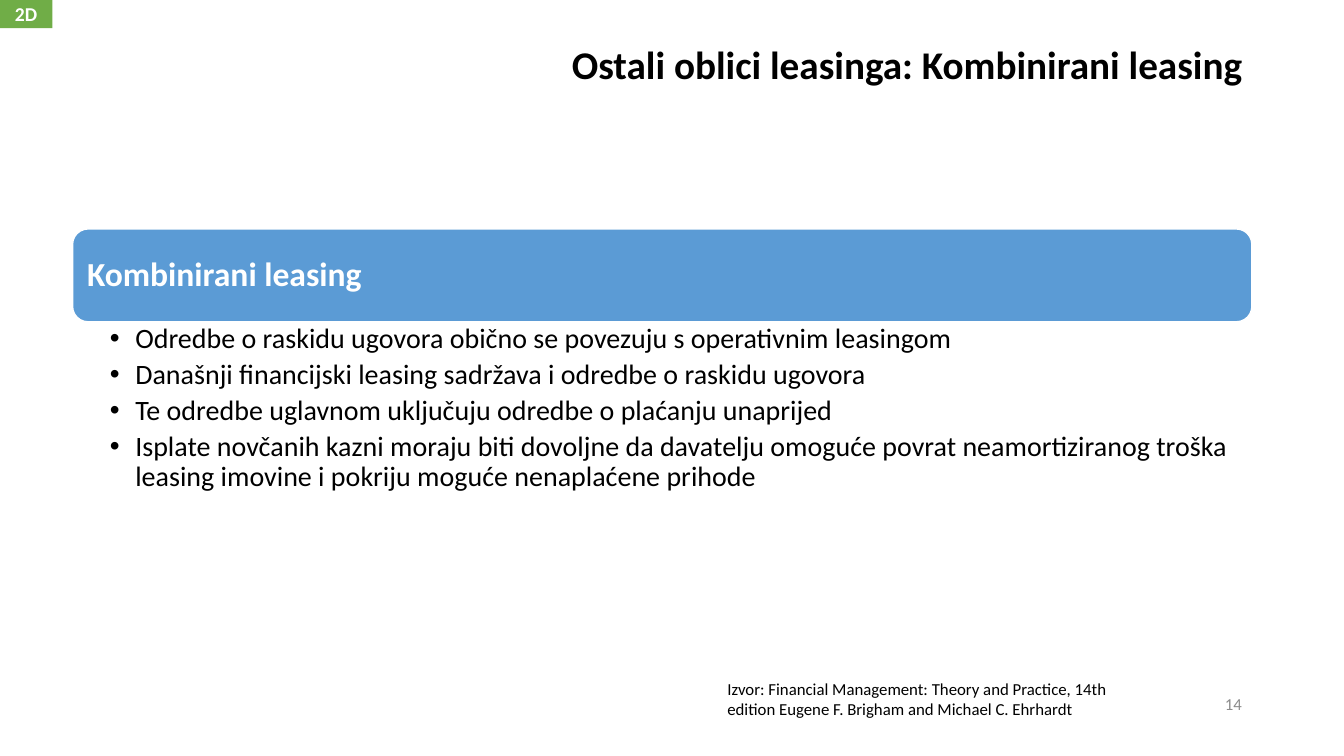
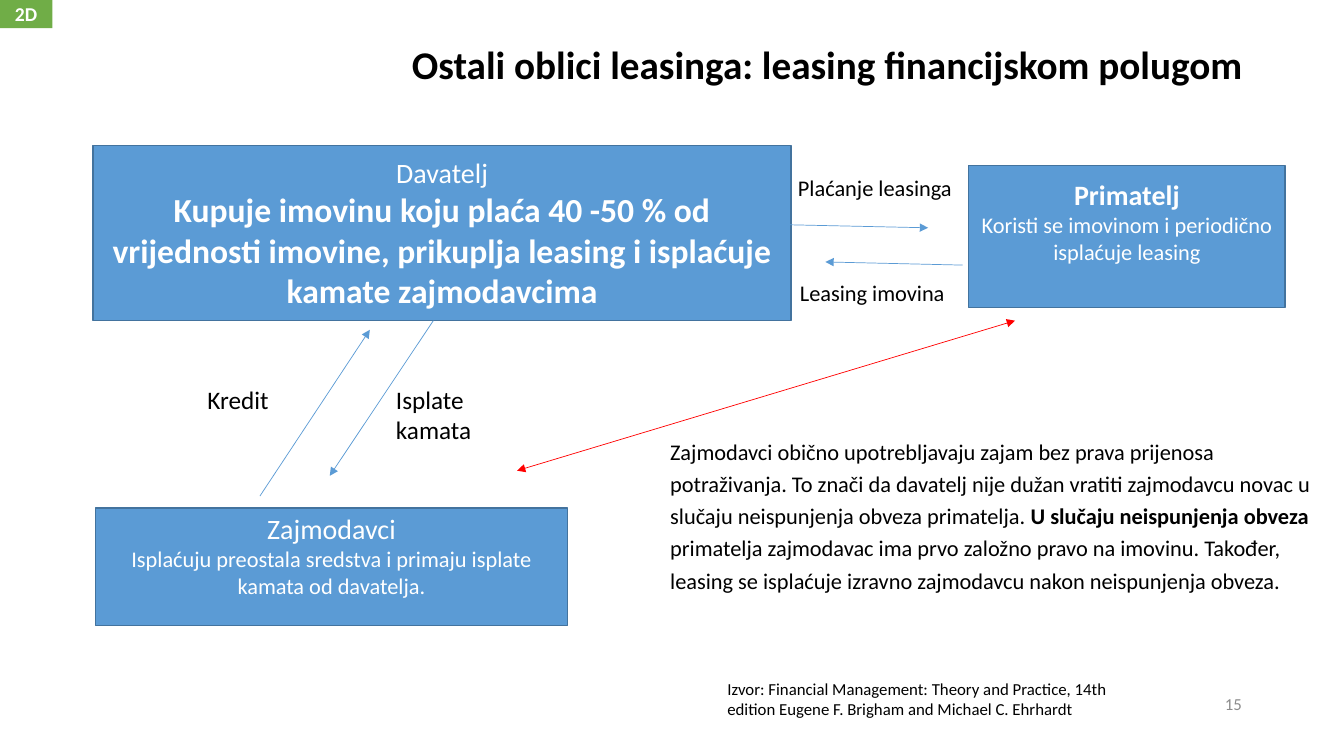
from dataclasses import dataclass
from typing import NamedTuple

from lxml.etree import SubElement
from pptx import Presentation
from pptx.dml.color import RGBColor
from pptx.enum.shapes import MSO_CONNECTOR, MSO_SHAPE
from pptx.enum.text import MSO_ANCHOR, PP_ALIGN
from pptx.oxml.ns import qn
from pptx.shapes.autoshape import Shape
from pptx.slide import Slide
from pptx.util import Cm, Pt


@dataclass(frozen=True)
class Theme:
    font: str = "Calibri"
    blue: str = "5B9BD5"
    edge: str = "43739E"
    green: str = "70AD47"
    red: str = "FF0000"
    white: str = "FFFFFF"
    black: str = "000000"
    gray: str = "8C8C8C"
    title: int = 28
    head: int = 24
    body: int = 20
    label: int = 18
    note: int = 16
    tag: int = 14
    small: int = 12


THEME = Theme()
SOURCE = ("Izvor: Financial Management: Theory and Practice, 14th edition "
          "Eugene F. Brigham and Michael C. Ehrhardt")


class Area(NamedTuple):
    """Left, top, width and height in centimetres."""
    x: float
    y: float
    w: float
    h: float


class Run(NamedTuple):
    text: str
    size: int
    bold: bool = False


class Panel(NamedTuple):
    area: Area
    lines: list[list[Run]]
    base: float = 0.13


class Label(NamedTuple):
    area: Area
    text: str
    size: int


class Arrow(NamedTuple):
    start: tuple[float, float]
    end: tuple[float, float]
    color: str = THEME.blue
    both: bool = False


PANELS = [
    Panel(Area(2.34, 3.66, 17.6, 4.42), [
        [Run("Davatelj", THEME.body)],
        [Run("Kupuje imovinu koju plaća 40 -50 % od vrijednosti imovine, "
             "prikuplja leasing i isplaćuje kamate zajmodavcima", THEME.head, True)]]),
    Panel(Area(24.41, 4.17, 7.98, 3.58), [
        [Run("Primatelj", THEME.body, True)],
        [Run("Koristi se imovinom i periodično isplaćuje leasing", THEME.note)]], 0.9),
    Panel(Area(2.41, 12.8, 11.89, 2.97), [
        [Run("Zajmodavci", THEME.body)],
        [Run("Isplaćuju preostala sredstva i primaju isplate kamata od davatelja.",
             THEME.note)]], 0.73),
]
LABELS = [
    Label(Area(19.86, 4.27, 5.72, 0.97), "Plaćanje leasinga", THEME.note),
    Label(Area(19.91, 6.91, 5.72, 0.97), "Leasing imovina", THEME.note),
    Label(Area(9.73, 9.55, 3.61, 2.44), "Isplate kamata", THEME.label),
    Label(Area(4.98, 9.55, 3.61, 1.7), "Kredit", THEME.label),
]
ARROWS = [
    Arrow((13.03, 11.86), (25.58, 8.08), THEME.red, True),
    Arrow((10.92, 8.08), (8.31, 11.99)),
    Arrow((6.55, 12.5), (9.32, 8.31)),
    Arrow((24.26, 6.68), (20.8, 6.6)),
    Arrow((19.69, 5.66), (23.39, 5.74)),
]
TERMS = [
    "Odredbe o raskidu ugovora obično se povezuju s operativnim leasingom",
    "Današnji financijski leasing sadržava i odredbe o raskidu ugovora",
    "Te odredbe uglavnom uključuju odredbe o plaćanju unaprijed",
    "Isplate novčanih kazni moraju biti dovoljne da davatelju omoguće povrat "
    "neamortiziranog troška leasing imovine i pokriju moguće nenaplaćene prihode",
]
NOTE = [
    Run("Zajmodavci obično upotrebljavaju zajam bez prava prijenosa potraživanja. "
        "To znači da davatelj nije dužan vratiti zajmodavcu novac u slučaju "
        "neispunjenja obveza primatelja. ", THEME.note),
    Run("U slučaju neispunjenja obveza ", THEME.note, True),
    Run("primatelja zajmodavac ima prvo založno pravo na imovinu. Također, leasing "
        "se isplaćuje izravno zajmodavcu nakon neispunjenja obveza.", THEME.note),
]


def write(shape: Shape, lines: list[list[Run]], *, color: str = THEME.black,
          align: PP_ALIGN = PP_ALIGN.LEFT, anchor: MSO_ANCHOR = MSO_ANCHOR.TOP,
          inset: tuple[float, float, float, float] = (0.25, 0.13, 0.25, 0.13),
          pitch: float = 1.0, after: float = 0, bullet: str = "") -> None:
    """Fill a shape with text; inset is left, top, right, bottom in cm."""
    frame = shape.text_frame
    frame.word_wrap = True
    frame.vertical_anchor = anchor
    (frame.margin_left, frame.margin_top,
     frame.margin_right, frame.margin_bottom) = map(Cm, inset)
    for i, runs in enumerate(lines):
        para = frame.add_paragraph() if i else frame.paragraphs[0]
        para.alignment = align
        para.line_spacing = pitch
        para.space_after = Pt(after)
        if bullet:
            props = para._p.get_or_add_pPr()
            props.set("marL", str(Cm(0.64)))
            props.set("indent", str(-Cm(0.64)))
            SubElement(props, qn("a:buFont")).set("typeface", "Arial")
            SubElement(props, qn("a:buChar")).set("char", bullet)
        for item in runs:
            run = para.add_run()
            run.text = item.text
            font = run.font
            font.name, font.size, font.bold = THEME.font, Pt(item.size), item.bold
            font.color.rgb = RGBColor.from_string(color)


def add_text(slide: Slide, area: Area) -> Shape:
    return slide.shapes.add_textbox(*map(Cm, area))


def add_box(slide: Slide, area: Area, fill: str, edge: str = "",
            kind: MSO_SHAPE = MSO_SHAPE.RECTANGLE) -> Shape:
    box = slide.shapes.add_shape(kind, *map(Cm, area))
    box.shadow.inherit = False
    box.fill.solid()
    box.fill.fore_color.rgb = RGBColor.from_string(fill)
    if edge:
        box.line.color.rgb = RGBColor.from_string(edge)
        box.line.width = Pt(1)
    else:
        box.line.fill.background()
    return box


def add_arrow(slide: Slide, arrow: Arrow) -> None:
    link = slide.shapes.add_connector(
        MSO_CONNECTOR.STRAIGHT, *map(Cm, arrow.start + arrow.end))
    link.line.color.rgb = RGBColor.from_string(arrow.color)
    link.line.width = Pt(0.5)
    line = link.line._get_or_add_ln()
    for tip in ("a:headEnd", "a:tailEnd") if arrow.both else ("a:tailEnd",):
        SubElement(line, qn(tip)).set("type", "triangle")
    SubElement(link._element.spPr, qn("a:effectLst"))


def add_page(deck: Presentation, title: str, number: int) -> Slide:
    """Add a slide with the shared title, tag, number and source."""
    slide = deck.slides.add_slide(deck.slide_layouts[6])
    write(add_text(slide, Area(2.34, 1.02, 29.21, 1.47)),
          [[Run(title, THEME.title, True)]], align=PP_ALIGN.RIGHT, pitch=0.9)
    write(add_box(slide, Area(0, 0, 1.32, 0.71), THEME.green),
          [[Run("2D", THEME.tag, True)]], color=THEME.white,
          align=PP_ALIGN.CENTER, anchor=MSO_ANCHOR.MIDDLE)
    write(add_text(slide, Area(23.93, 17.22, 7.62, 1.02)),
          [[Run(str(number), THEME.small)]], color=THEME.gray,
          align=PP_ALIGN.RIGHT, anchor=MSO_ANCHOR.MIDDLE)
    write(add_text(slide, Area(18.08, 16.97, 10.72, 1.27)),
          [[Run(SOURCE, THEME.small)]])
    return slide


def add_terms(deck: Presentation) -> None:
    slide = add_page(deck, "Ostali oblici leasinga: Kombinirani leasing", 14)
    head = add_box(slide, Area(1.83, 5.77, 29.72, 2.34), THEME.blue, THEME.white,
                   MSO_SHAPE.ROUNDED_RECTANGLE)
    write(head, [[Run("Kombinirani leasing", THEME.head, True)]], color=THEME.white,
          anchor=MSO_ANCHOR.MIDDLE, inset=(0.25, 0.25, 0.25, 0.25), pitch=0.9)
    write(add_text(slide, Area(1.83, 8.1, 29.72, 4.57)),
          [[Run(term, THEME.body)] for term in TERMS],
          inset=(0.94, 0.08, 0.41, 0.08), pitch=0.9, after=4, bullet="•")


def add_scheme(deck: Presentation) -> None:
    slide = add_page(deck, "Ostali oblici leasinga: leasing financijskom polugom", 15)
    for panel in PANELS:
        write(add_box(slide, panel.area, THEME.blue, THEME.edge), panel.lines,
              color=THEME.white, align=PP_ALIGN.CENTER, anchor=MSO_ANCHOR.MIDDLE,
              inset=(0.25, 0.13, 0.25, panel.base))
    write(add_text(slide, Area(16.64, 10.77, 16.64, 5.18)), [NOTE], pitch=1.2)
    for label in LABELS:
        write(add_text(slide, label.area), [[Run(label.text, label.size)]])
    for arrow in ARROWS:
        add_arrow(slide, arrow)


def main() -> None:
    deck = Presentation()
    deck.slide_width, deck.slide_height = Cm(33.87), Cm(19.05)
    add_terms(deck)
    add_scheme(deck)
    deck.save("out.pptx")


if __name__ == "__main__":
    main()
